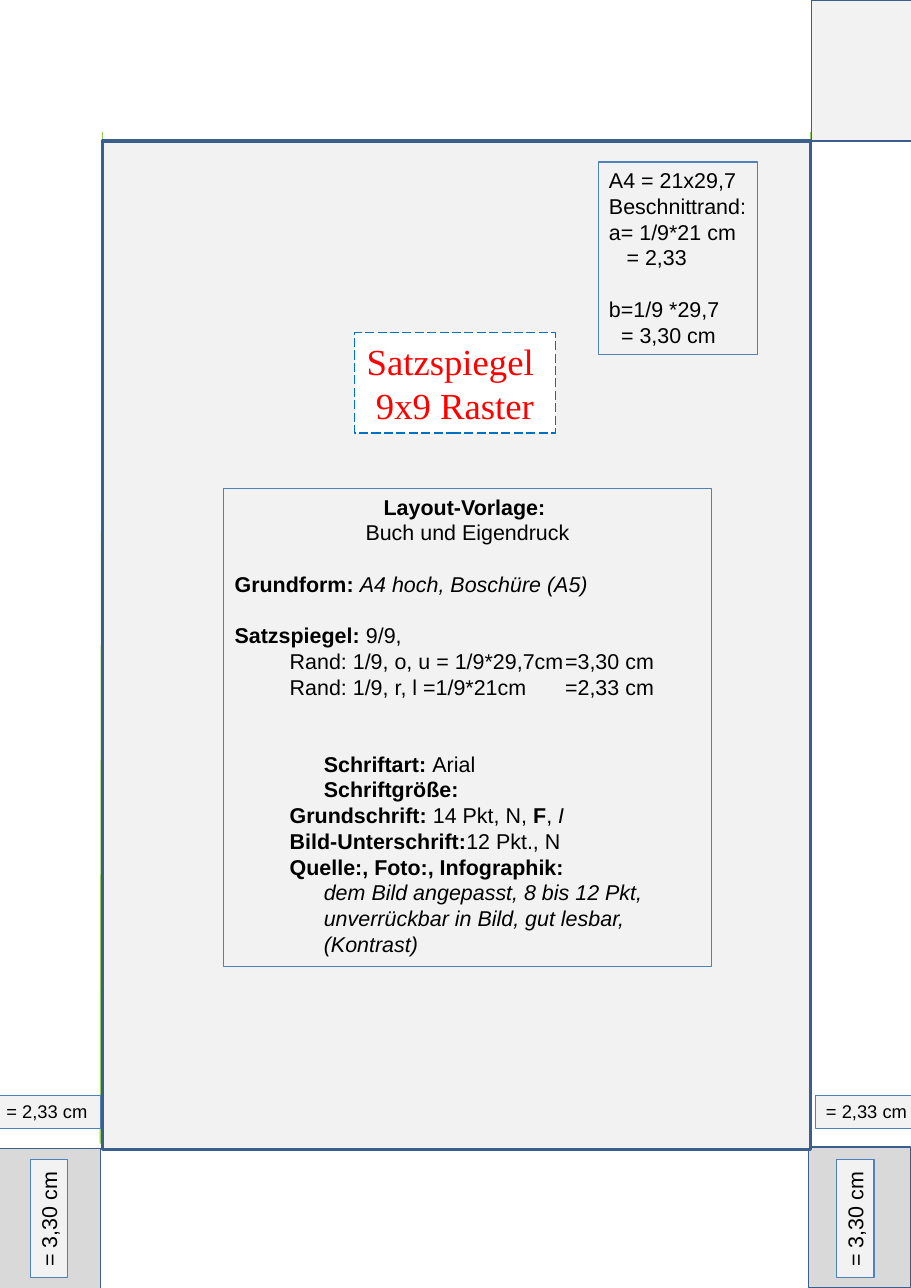
"""Build the A4 type area template slide with its 9x9 grid margins."""
from lxml import etree
from pptx import Presentation
from pptx.dml.color import RGBColor
from pptx.enum.dml import MSO_LINE
from pptx.enum.shapes import MSO_CONNECTOR, MSO_SHAPE
from pptx.enum.text import MSO_ANCHOR, MSO_AUTO_SIZE, PP_ALIGN
from pptx.oxml.ns import qn
from pptx.util import Inches, Pt

RECTANGLE = MSO_SHAPE.RECTANGLE
STRAIGHT = MSO_CONNECTOR.STRAIGHT
LONG_DASH = MSO_LINE.LONG_DASH
TOP, MIDDLE = MSO_ANCHOR.TOP, MSO_ANCHOR.MIDDLE
NO_AUTOFIT = MSO_AUTO_SIZE.NONE
LEFT, CENTER = PP_ALIGN.LEFT, PP_ALIGN.CENTER
LIGHT_GRAY, DARK_GRAY, WHITE = "F2F2F2", "D9D9D9", "FFFFFF"
FRAME_BLUE, LABEL_BLUE, DASH_BLUE = "3A5F8C", "4F81BD", "0070C0"
BLACK, RED, GREEN = "000000", "FF0000", "92D050"
BLANK_LINE = 16.8


def style_box(shape, fill, line, width=0.75):
    """Fill and outline a box; a fill of None leaves it clear."""
    if fill:
        shape.fill.solid()
        shape.fill.fore_color.rgb = RGBColor.from_string(fill)
    else:
        shape.fill.background()
    shape.line.color.rgb = RGBColor.from_string(line)
    shape.line.width = Pt(width)


def write_text(shape, rows, size, font="Arial", color=BLACK, wrap=False, anchor=TOP):
    """Write rows of (alignment, margin, space before, runs of (text, style))."""
    frame = shape.text_frame
    frame.auto_size = NO_AUTOFIT
    frame.word_wrap = wrap
    frame.vertical_anchor = anchor
    for index, (alignment, margin, space, runs) in enumerate(rows):
        paragraph = frame.paragraphs[0] if index == 0 else frame.add_paragraph()
        properties = paragraph._p.get_or_add_pPr()
        properties.set("marL", str(Inches(margin)))
        properties.set("indent", "0")
        etree.SubElement(properties, qn("a:buNone"))
        if any("\t" in text for text, style in runs):
            tabs = etree.SubElement(properties, qn("a:tabLst"))
            etree.SubElement(tabs, qn("a:tab"), pos=str(Inches(3.4)), algn="l")
        paragraph.alignment = alignment
        paragraph.space_before = Pt(space)
        for text, style in runs:
            run = paragraph.add_run()
            run.text = text
            run.font.name = font
            run.font.size = Pt(size)
            run.font.bold = style == "bold"
            run.font.italic = style == "italic"
            run.font.color.rgb = RGBColor.from_string(color)


presentation = Presentation()
presentation.slide_width = Inches(8.27)
presentation.slide_height = Inches(11.69)
slide = presentation.slides.add_slide(presentation.slide_layouts[1])
shapes = slide.shapes
title, layout_notes = slide.placeholders

guides = [
    (0.93, 10.41, 7.36, 10.41),
    (0.93, 1.2, 0.91, 10.38),
    (7.36, 1.2, 7.36, 10.38),
    (0.93, 1.28, 7.36, 1.28),
]
for guide in guides:
    connector = shapes.add_connector(STRAIGHT, *map(Inches, guide))
    connector.line.color.rgb = RGBColor.from_string(GREEN)
    connector.line.width = Pt(0.75)
    etree.SubElement(connector._element.spPr, qn("a:effectLst"))

corners = [(7.34, 10.41, DARK_GRAY), (-0.02, 10.42, DARK_GRAY), (7.37, 0, LIGHT_GRAY)]
for left, top, fill in corners:
    corner = shapes.add_shape(RECTANGLE, Inches(left), Inches(top), Inches(0.93), Inches(1.28))
    corner.shadow.inherit = False
    style_box(corner, fill, FRAME_BLUE)

margin_labels = [
    (-0.09, 10.89, 1.07, 0.34, 270, "= 3,30 cm", 14),
    (-0.04, 9.94, 0.95, 0.3, 0, "= 2,33 cm", 12),
    (7.23, 10.89, 1.07, 0.34, 270, "= 3,30 cm", 14),
    (7.4, 9.94, 0.95, 0.3, 0, "= 2,33 cm", 12),
]
for left, top, width, height, rotation, text, size in margin_labels:
    label = shapes.add_shape(RECTANGLE, Inches(left), Inches(top), Inches(width), Inches(height))
    label.shadow.inherit = False
    label.rotation = rotation
    style_box(label, LIGHT_GRAY, LABEL_BLUE)
    write_text(label, [(LEFT, 0, 0, [(text, "")])], size)

type_area = shapes.add_shape(RECTANGLE, Inches(0.93), Inches(1.28), Inches(6.43), Inches(9.15))
type_area.shadow.inherit = False
style_box(type_area, LIGHT_GRAY, FRAME_BLUE, 2)

title.left, title.top, title.width, title.height = map(Inches, (3.22, 3.02, 1.82, 0.91))
style_box(title, WHITE, DASH_BLUE)
title.line.dash_style = LONG_DASH
title_rows = [(CENTER, 0, 0, [(text, "")]) for text in ("Satzspiegel ", "9x9 Raster")]
write_text(title, title_rows, 24, "Times New Roman", RED, anchor=MIDDLE)
shapes._spTree.append(title._element)

trim_box = shapes.add_shape(RECTANGLE, Inches(5.43), Inches(1.47), Inches(1.45), Inches(1.75))
trim_box.shadow.inherit = False
style_box(trim_box, None, LABEL_BLUE)
trim_rows = [
    (LEFT, 0, 0, [("A4 = 21x29,7", "")]),
    (LEFT, 0, 0, [("Beschnittrand:", "")]),
    (LEFT, 0, 0, [("a= 1/9*21 cm", "")]),
    (LEFT, 0.16, 0, [("= 2,33", "")]),
    (LEFT, 0, BLANK_LINE, [("b=1/9 *29,7", "")]),
    (LEFT, 0.11, 0, [("= 3,30 cm", "")]),
]
write_text(trim_box, trim_rows, 14)

layout_notes.left, layout_notes.top = Inches(2.03), Inches(4.43)
layout_notes.width, layout_notes.height = Inches(4.43), Inches(4.34)
style_box(layout_notes, LIGHT_GRAY, LABEL_BLUE)
layout_rows = [
    (CENTER, 0, 0, [("Layout-Vorlage: ", "bold")]),
    (CENTER, 0, 0, [("Buch und Eigendruck", "")]),
    (LEFT, 0, BLANK_LINE, [("Grundform: ", "bold"), ("A4 hoch, Boschüre (A5)", "italic")]),
    (LEFT, 0, BLANK_LINE, [("Satzspiegel: ", "bold"), ("9/9,", "")]),
    (LEFT, 0.5, 0, [("Rand: 1/9, o, u = 1/9*29,7cm\t=3,30 cm", "")]),
    (LEFT, 0.5, 0, [("Rand: 1/9, r, l =1/9*21cm\t=2,33 cm", "")]),
    (LEFT, 0.81, 2 * BLANK_LINE, [("Schriftart: ", "bold"), ("Arial", "")]),
    (LEFT, 0.81, 0, [("Schriftgröße:", "bold")]),
    (LEFT, 0.5, 0, [("Grundschrift: ", "bold"), ("14 Pkt, N, ", ""), ("F", "bold"),
                    (", ", ""), ("I", "italic")]),
    (LEFT, 0.5, 0, [("Bild-Unterschrift:", "bold"), ("12 Pkt., N", "")]),
    (LEFT, 0.5, 0, [("Quelle:, Foto:, Infographik:", "bold")]),
    (LEFT, 0.81, 0, [("dem Bild angepasst, 8 bis 12 Pkt, unverrückbar in Bild, "
                      "gut lesbar, (Kontrast)", "italic")]),
]
write_text(layout_notes, layout_rows, 14, wrap=True)
shapes._spTree.append(layout_notes._element)

presentation.save("out.pptx")
